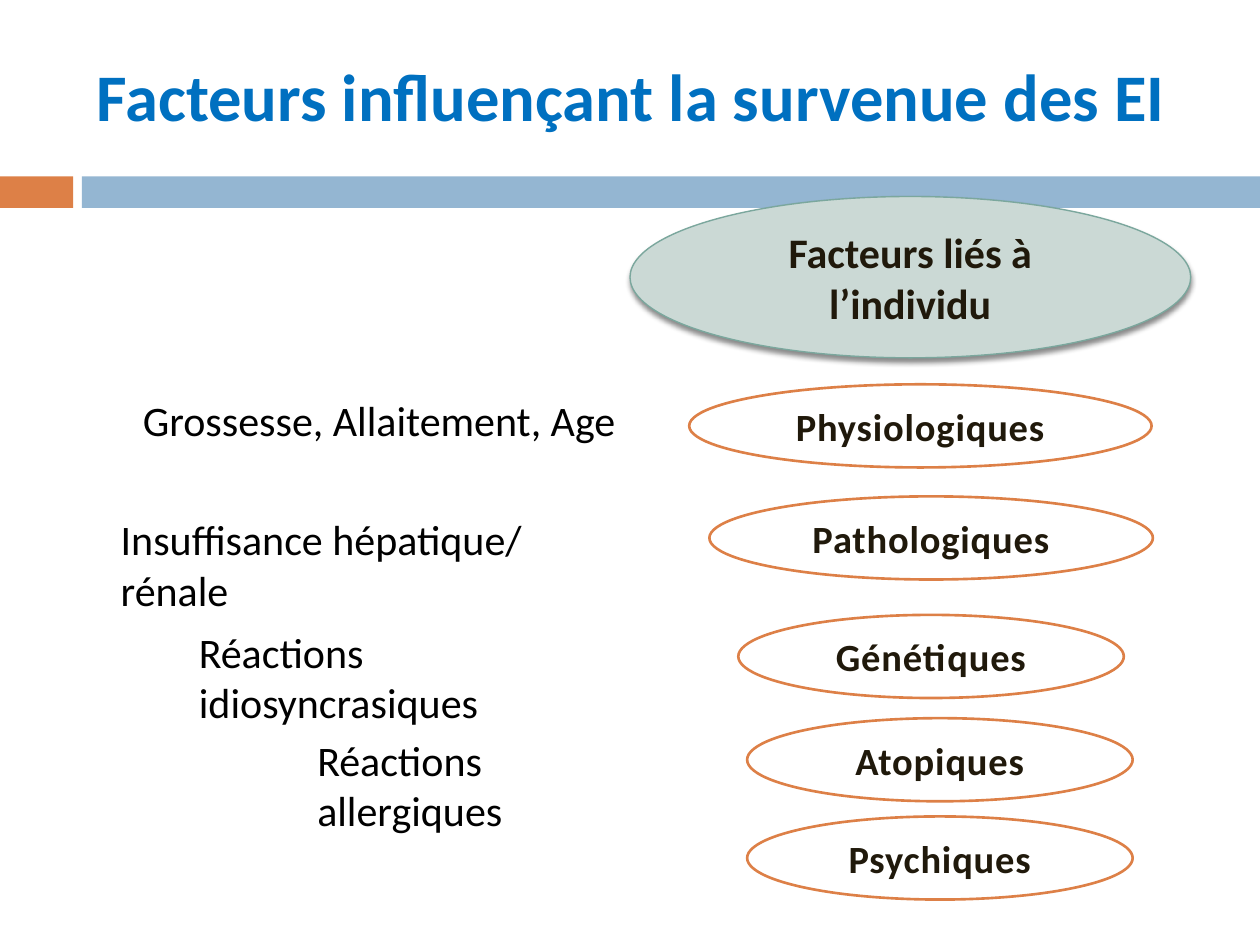
from lxml.etree import SubElement
from pptx import Presentation
from pptx.dml.color import RGBColor
from pptx.enum.shapes import MSO_SHAPE
from pptx.enum.text import MSO_ANCHOR, MSO_AUTO_SIZE, PP_ALIGN
from pptx.oxml.ns import qn
from pptx.util import Inches, Pt

WIDTH, HEIGHT = Inches(10), Inches(7.5)
FONT = "Calibri"

ORANGE = RGBColor(0xDD, 0x80, 0x47)
BLUE = RGBColor(0x94, 0xB6, 0xD2)
TITLE_BLUE = RGBColor(0x00, 0x70, 0xC0)
DARK = RGBColor(0x20, 0x19, 0x0B)
BLACK = RGBColor(0x00, 0x00, 0x00)
WHITE = RGBColor(0xFF, 0xFF, 0xFF)
SAGE = RGBColor(0xCB, 0xD9, 0xD5)
GREEN = RGBColor(0x7B, 0xA7, 0x9D)

# Factor: label, then left, top and width in percent of the slide
FACTORS = [
    ("Physiologiques", 54.7, 40.67, 36.7),
    ("Pathologiques", 56.3, 52.53, 35.2),
    ("Génétiques", 58.6, 65.07, 30.6),
    ("Atopiques", 59.3, 76, 30.6),
    ("Psychiques", 59.3, 86.4, 30.6),
]
FACTOR_HEIGHT = 8.8

# Example: text, then left, top and width in percent, and alignment
EXAMPLES = [
    ("Grossesse, Allaitement, Age", 5.5, 41.07, 49.2, PP_ALIGN.CENTER),
    ("Insuffisance hépatique/ rénale", 8.6, 53.73, 42, PP_ALIGN.LEFT),
    ("Réactions idiosyncrasiques", 14.8, 65.6, 36, PP_ALIGN.LEFT),
    ("Réactions allergiques", 24.2, 77.07, 29, PP_ALIGN.LEFT),
]
EXAMPLE_HEIGHT = 6.67


def area(left, top, width, height):
    """Turn percentages of the slide into lengths."""
    return (int(WIDTH * left / 100), int(HEIGHT * top / 100),
            int(WIDTH * width / 100), int(HEIGHT * height / 100))


def write(holder, text, size=24, color=BLACK, bold=False, spacing=None,
          align=PP_ALIGN.CENTER, anchor=MSO_ANCHOR.MIDDLE):
    frame = holder.text_frame
    frame.word_wrap = True
    frame.auto_size = MSO_AUTO_SIZE.NONE
    frame.vertical_anchor = anchor
    paragraph = frame.paragraphs[0]
    paragraph.alignment = align
    run = paragraph.add_run()
    run.text = text
    run.font.name = FONT
    run.font.size = Pt(size)
    run.font.bold = bold
    run.font.color.rgb = color
    if spacing:
        run.font._element.set("spc", str(int(spacing * 100)))


def add_filled(slide, preset, bounds, fill, line=None, line_width=1.5):
    shape = slide.shapes.add_shape(preset, *area(*bounds))
    shape.fill.solid()
    shape.fill.fore_color.rgb = fill
    if line is None:
        shape.line.fill.background()
    else:
        shape.line.color.rgb = line
        shape.line.width = Pt(line_width)
    shape.shadow.inherit = False
    return shape


def add_drop_shadow(shape):
    effects = shape._element.spPr.find(qn("a:effectLst"))
    shadow = SubElement(effects, qn("a:outerShdw"), blurRad=str(Pt(3)),
                        dist=str(Pt(2.4)), dir="5400000", rotWithShape="0")
    color = SubElement(shadow, qn("a:srgbClr"), val="000000")
    SubElement(color, qn("a:alpha"), val="45000")


def add_title(slide, text):
    title = slide.shapes.title
    title.left, title.top, title.width, title.height = area(-0.4, 6.13, 101, 14.4)
    write(title, text, size=38, color=TITLE_BLUE, bold=True)
    # Keep the heading clear of the band below it
    title.text_frame.margin_top = 0
    title.text_frame.margin_bottom = Inches(0.5)


def add_factor(slide, label, left, top, width):
    factor = add_filled(slide, MSO_SHAPE.OVAL, (left, top, width, FACTOR_HEIGHT),
                        WHITE, ORANGE)
    write(factor, label, size=22, color=DARK, bold=True, spacing=0.5)


def add_example(slide, text, left, top, width, align):
    example = slide.shapes.add_textbox(*area(left, top, width, EXAMPLE_HEIGHT))
    write(example, text, align=align, anchor=MSO_ANCHOR.TOP)


def main():
    deck = Presentation()
    deck.slide_width, deck.slide_height = WIDTH, HEIGHT
    slide = deck.slides.add_slide(deck.slide_layouts[5])

    # Band under the title
    add_filled(slide, MSO_SHAPE.RECTANGLE, (0, 18.67, 5.8, 3.33), ORANGE)
    add_filled(slide, MSO_SHAPE.RECTANGLE, (6.5, 18.67, 93.5, 3.33), BLUE)
    add_title(slide, "Facteurs influençant la survenue des EI")

    # Heading of the factors
    heading = add_filled(slide, MSO_SHAPE.OVAL, (50, 20.8, 44.5, 17.07),
                         SAGE, GREEN, 0.79)
    add_drop_shadow(heading)
    write(heading, "Facteurs liés à l’individu", color=DARK, bold=True)

    # Factors on the right, examples on the left
    for factor in FACTORS:
        add_factor(slide, *factor)
    for example in EXAMPLES:
        add_example(slide, *example)

    deck.save("out.pptx")


if __name__ == "__main__":
    main()
